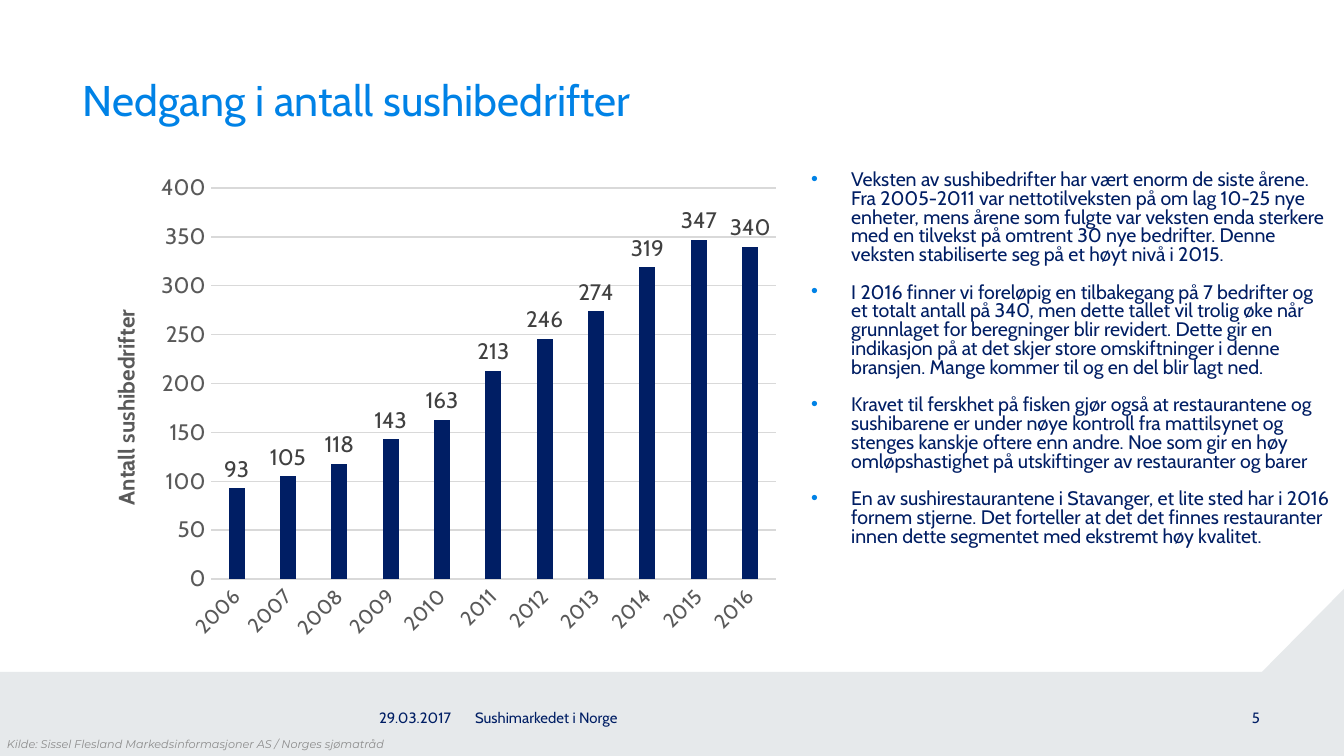
from lxml import etree
from pptx import Presentation
from pptx import util as u
from pptx.chart.data import CategoryChartData
from pptx.dml.color import RGBColor
from pptx.enum import chart as kinds, shapes, text
from pptx.oxml.ns import qn

SCALE = 914400 / 134.4
NAVY, BLUE, PALE = "001E64", "0082E6", "E6E9EB"
GREY, GRID, DARK, MUTED = "595959", "D9D9D9", "404040", "8C8C8C"

BULLETS = [
    "Veksten av sushibedrifter har vært enorm de siste årene. Fra 2005-2011 var "
    "nettotilveksten på om lag 10-25 nye enheter, mens årene som fulgte var veksten "
    "enda sterkere med en tilvekst på omtrent 30 nye bedrifter. Denne veksten "
    "stabiliserte seg på et høyt nivå i 2015.",
    "I 2016 finner vi foreløpig en tilbakegang på 7 bedrifter og et totalt antall på "
    "340, men dette tallet vil trolig øke når grunnlaget for beregninger blir "
    "revidert. Dette gir en indikasjon på at det skjer store omskiftninger i denne "
    "bransjen. Mange kommer til og en del blir lagt ned.",
    "Kravet til ferskhet på fisken gjør også at restaurantene og sushibarene er under "
    "nøye kontroll fra mattilsynet og stenges kanskje oftere enn andre. Noe som gir en "
    "høy omløpshastighet på utskiftinger av restauranter og barer",
    "En av sushirestaurantene i Stavanger, et lite sted har i 2016 fornem stjerne. "
    "Det forteller at det det finnes restauranter innen dette segmentet med ekstremt "
    "høy kvalitet.",
]
YEARS = [str(year) for year in range(2006, 2017)]
COMPANIES = [93, 105, 118, 143, 163, 213, 246, 274, 319, 347, 340]


def px(length):
    return u.Emu(round(length * SCALE))


def color(value):
    return RGBColor.from_string(value)


def set_font(font, size, tint, name="Cabin", bold=False, italic=False):
    font.name, font.size, font.bold, font.italic = name, u.Pt(size), bold, italic
    font.color.rgb = color(tint)


class Painter:
    """Draws styled elements on the current slide."""

    def __init__(self, slide):
        self.shapes = slide.shapes

    def paint(self, shape, fill):
        shape.shadow.inherit = False
        shape.fill.solid()
        shape.fill.fore_color.rgb = color(fill)
        shape.line.fill.background()

    def band(self, left, top, width, height, fill):
        shape = self.shapes.add_shape(
            shapes.MSO_SHAPE.RECTANGLE, px(left), px(top), px(width), px(height))
        self.paint(shape, fill)

    def polygon(self, points, fill):
        builder = self.shapes.build_freeform(*points[0], scale=SCALE)
        builder.add_line_segments(points[1:], close=True)
        self.paint(builder.convert_to_shape(), fill)

    def frame(self, left, top, width, height, inset=True):
        box = self.shapes.add_textbox(px(left), px(top), px(width), px(height))
        frame = box.text_frame
        frame.word_wrap = True
        if not inset:
            frame.margin_left = frame.margin_right = 0
            frame.margin_top = frame.margin_bottom = 0
        return frame

    def label(self, left, top, width, height, words, size, tint=NAVY, spacing=None,
              align=text.PP_ALIGN.LEFT, anchor=text.MSO_ANCHOR.TOP, **style):
        frame = self.frame(left, top, width, height, inset=False)
        frame.vertical_anchor = anchor
        para = frame.paragraphs[0]
        para.text, para.alignment, para.line_spacing = words, align, spacing
        set_font(para.font, size, tint, **style)

    def bullets(self, left, top, width, height, items, size):
        frame = self.frame(left, top, width, height)
        for index, item in enumerate(items):
            para = frame.add_paragraph() if index else frame.paragraphs[0]
            para.text, para.line_spacing = item, 0.8
            if index:
                para.space_before = u.Pt(10)
            props = para._p.get_or_add_pPr()
            props.set("marL", str(px(40)))
            props.set("indent", str(-px(40)))
            tint = etree.SubElement(props, qn("a:buClr"))
            etree.SubElement(tint, qn("a:srgbClr"), val=BLUE)
            etree.SubElement(props, qn("a:buFont"), typeface="Arial")
            etree.SubElement(props, qn("a:buChar"), char="•")
            set_font(para.font, size, NAVY)

    def columns(self, left, top, width, height, categories, values, axis_title):
        data = CategoryChartData()
        data.categories = categories
        data.add_series("Series 1", values)
        chart = self.shapes.add_chart(
            kinds.XL_CHART_TYPE.COLUMN_CLUSTERED,
            px(left), px(top), px(width), px(height), data).chart
        chart.has_title = chart.has_legend = False
        set_font(chart.font, 10, "000000")

        plot = chart.plots[0]
        plot.vary_by_categories = False
        plot.gap_width, plot.overlap = 219, -27
        series = plot.series[0]
        series.format.fill.solid()
        series.format.fill.fore_color.rgb = color(NAVY)
        plot.has_data_labels = True
        plot.data_labels.show_value = True
        plot.data_labels.position = kinds.XL_LABEL_POSITION.OUTSIDE_END
        set_font(plot.data_labels.font, 12, DARK)

        years, counts = chart.category_axis, chart.value_axis
        for axis, size in ((years, 11), (counts, 12)):
            axis.major_tick_mark = axis.minor_tick_mark = kinds.XL_TICK_MARK.NONE
            set_font(axis.tick_labels.font, size, GREY)
        years._element.txPr.bodyPr.set("rot", "-2700000")
        counts.minimum_scale, counts.maximum_scale, counts.major_unit = 0, 400, 50
        counts.format.line.fill.background()
        for line in (years.format.line, counts.major_gridlines.format.line):
            line.color.rgb = color(GRID)
            line.width = u.Pt(0.75)
        para = counts.axis_title.text_frame.paragraphs[0]
        span = para.add_run()
        span.text = axis_title
        set_font(span.font, 12, GREY, bold=True)


def main():
    deck = Presentation()
    deck.slide_width, deck.slide_height = px(1344), px(756)
    page = Painter(deck.slides.add_slide(deck.slide_layouts[6]))
    page.band(0, 672, 1344, 84, PALE)
    page.polygon([(1344, 589), (1344, 756), (1179, 756)], PALE)
    page.columns(83, 165, 707, 485, YEARS, COMPANIES, "Antall sushibedrifter")
    page.label(83, 74, 1177, 71, "Nedgang i antall sushibedrifter", 23, BLUE)
    page.bullets(798, 165, 546, 520, BULLETS, 10.5)
    page.label(379, 711, 83, 17, "29.03.2017", 8, spacing=0.9)
    page.label(475, 711, 357, 17, "Sushimarkedet i Norge", 8, spacing=0.9)
    page.label(1165, 711, 95, 17, "5", 8, spacing=0.9, align=text.PP_ALIGN.RIGHT)
    page.label(7, 732, 504, 24,
               "Kilde: Sissel Flesland Markedsinformasjoner AS / Norges sjømatråd",
               6, MUTED, anchor=text.MSO_ANCHOR.MIDDLE, name="Montserrat", italic=True)
    deck.save("out.pptx")


if __name__ == "__main__":
    main()
